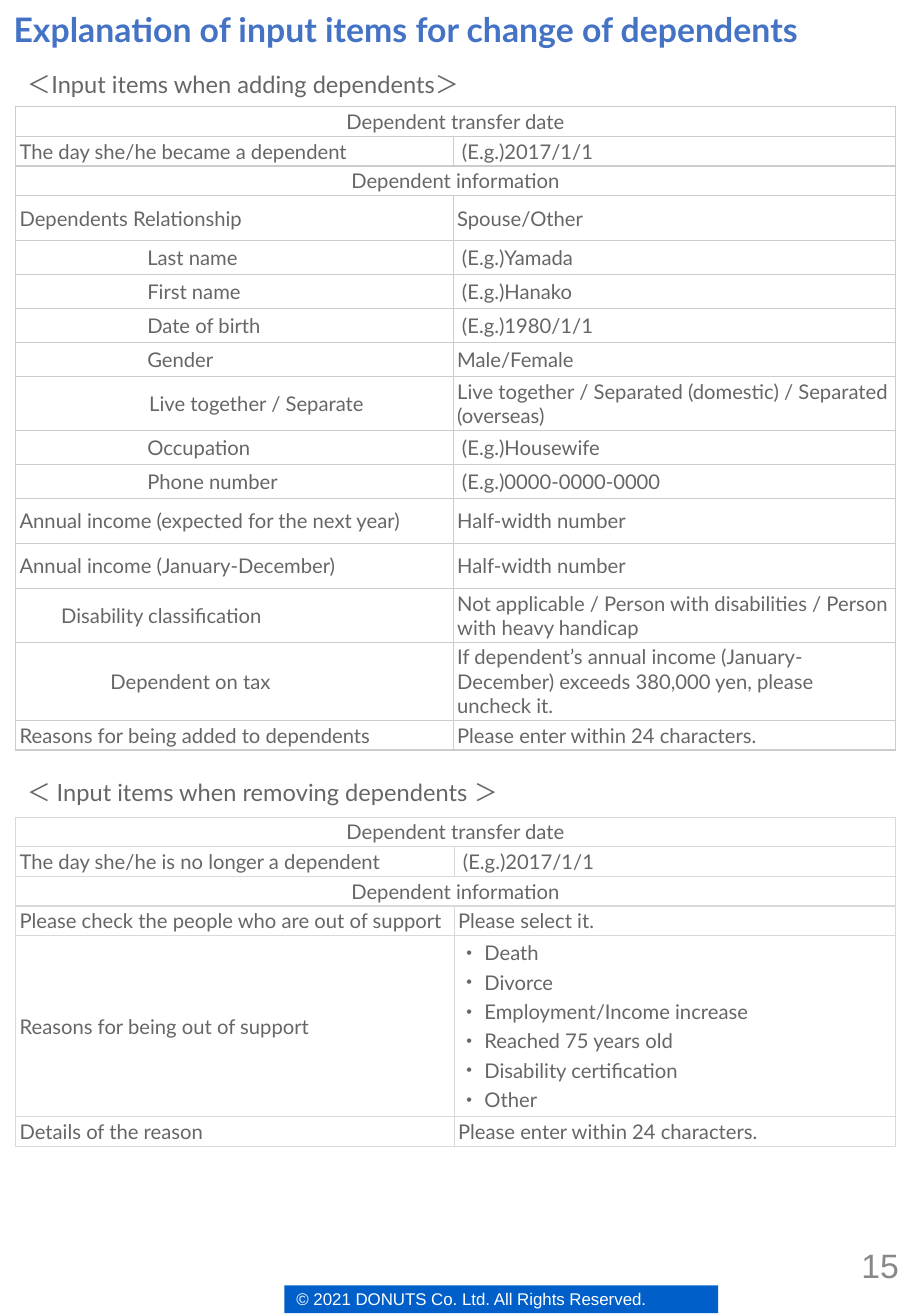
from dataclasses import dataclass
from lxml.etree import SubElement
from pptx import Presentation
from pptx.dml.color import RGBColor
from pptx.enum.shapes import MSO_SHAPE
from pptx.enum.text import MSO_ANCHOR, PP_ALIGN
from pptx.oxml.ns import qn
from pptx.util import Cm, Pt


@dataclass(frozen=True)
class Theme:
    font: str = "Lato"
    plain: str = "Arial"
    blue: str = "4472C4"
    bar: str = "005FC8"
    white: str = "FFFFFF"
    ink: str = "666666"
    pale: str = "888888"
    big: float = 20
    head: float = 14
    body: float = 12
    small: float = 10
    pitch: float = 17.4


THEME = Theme()
TITLE = "Explanation of input items for change of dependents"
NOTICE = "© 2021 DONUTS Co. Ltd. All Rights Reserved."
PAGE = "15"
REASONS = ["Death", "Divorce", "Employment/Income increase", "Reached 75 years old",
           "Disability certification", "Other"]

# Each row: height, label, label indent, entry
ADD = [
    (0.62, "Dependent transfer date", 0, None),
    (0.62, "The day she/he became a dependent", 0, "(E.g.)2017/1/1"),
    (0.62, "Dependent information", 0, None),
    (0.94, "Dependents Relationship", 0, "Spouse/Other"),
    (0.71, "Last name", 2.67, "(E.g.)Yamada"),
    (0.71, "First name", 2.67, "(E.g.)Hanako"),
    (0.71, "Date of birth", 2.67, "(E.g.)1980/1/1"),
    (0.71, "Gender", 2.67, "Male/Female"),
    (1.13, "Live together / Separate", 2.71, "Live together / Separated (domestic) / Separated (overseas)"),
    (0.71, "Occupation", 2.67, "(E.g.)Housewife"),
    (0.71, "Phone number", 2.67, "(E.g.)0000-0000-0000"),
    (0.94, "Annual income (expected for the next year)", 0, "Half-width number"),
    (0.94, "Annual income (January-December)", 0, "Half-width number"),
    (1.13, "Disability classification", 0.87, "Not applicable / Person with disabilities / Person with heavy handicap"),
    (1.63, "Dependent on tax", 1.9,
     "If dependent’s annual income (January-December) exceeds 380,000 yen, please uncheck it."),
    (0.62, "Reasons for being added to dependents", 0, "Please enter within 24 characters."),
]
REMOVE = [
    (0.62, "Dependent transfer date", 0, None),
    (0.62, "The day she/he is no longer a dependent", 0, "(E.g.)2017/1/1"),
    (0.62, "Dependent information", 0, None),
    (0.62, "Please check the people who are out of support", 0, "Please select it."),
    (3.78, "Reasons for being out of support", 0, REASONS),
    (0.62, "Details of the reason", 0, "Please enter within 24 characters."),
]
# Each part: heading, heading top, table top, column widths, line colour, rows
PARTS = [
    ("＜Input items when adding dependents＞", 1.33, 2.23, (9.15, 9.24), "CCCCCC", ADD),
    ("＜ Input items when removing dependents ＞", 16.14, 17.08, (9.17, 9.22), "D9D9D9", REMOVE),
]
LEFT = 0.33
INSET = 0.08


def style(part, size, tint, font=THEME.font, bold=False, align=PP_ALIGN.LEFT):
    for para in part.paragraphs:
        para.alignment = align
        for run in para.runs:
            run.font.name = font
            run.font.size = Pt(size)
            run.font.bold = bold
            run.font.color.rgb = RGBColor.from_string(tint)


def label(slide, text, box, size, tint, **look):
    frame = slide.shapes.add_textbox(*map(Cm, box)).text_frame
    frame.word_wrap = True
    frame.text = text
    style(frame, size, tint, **look)
    return frame


def border(cell, tint):
    props = cell._tc.get_or_add_tcPr()
    for side in ("lnL", "lnR", "lnT", "lnB"):
        line = SubElement(props, qn(f"a:{side}"), w=str(Pt(0.75)))
        fill = SubElement(line, qn("a:solidFill"))
        SubElement(fill, qn("a:srgbClr"), val=tint)


def bullet(para):
    props = para._p.get_or_add_pPr()
    props.set("marL", str(Cm(0.55)))
    props.set("indent", str(-Cm(0.38)))
    SubElement(props, qn("a:buSzPct"), val="80000")
    SubElement(props, qn("a:buFont"), typeface=THEME.plain)
    SubElement(props, qn("a:buChar"), char="•")
    para.line_spacing = Pt(THEME.pitch)


def write(cell, text, indent=0, align=PP_ALIGN.LEFT):
    cell.margin_left = Cm(INSET + indent)
    cell.vertical_anchor = MSO_ANCHOR.MIDDLE
    frame = cell.text_frame
    if isinstance(text, list):
        cell.margin_top, cell.margin_bottom = 0, Cm(0.1)
        frame.text = "\n".join(text)
        for para in frame.paragraphs:
            bullet(para)
    else:
        frame.text = text
    style(frame, THEME.body, THEME.ink, align=align)


def grid(slide, top, widths, tint, rows):
    high = sum(row[0] for row in rows)
    table = slide.shapes.add_table(len(rows), 2, Cm(LEFT), Cm(top), Cm(sum(widths)), Cm(high)).table
    table.first_row = table.horz_banding = False
    for col, width in zip(table.columns, widths):
        col.width = Cm(width)
    for cell in table.iter_cells():
        border(cell, tint)
        cell.fill.solid()
        cell.fill.fore_color.rgb = RGBColor.from_string(THEME.white)
        cell.margin_left = cell.margin_right = Cm(INSET)
        cell.margin_top = cell.margin_bottom = Cm(0.05)
    for at, (height, name, indent, entry) in enumerate(rows):
        table.rows[at].height = Cm(height)
        first, last = table.cell(at, 0), table.cell(at, 1)
        if entry is None:
            first.merge(last)
            write(first, name, align=PP_ALIGN.CENTER)
            last.text_frame.paragraphs[0].font.size = Pt(THEME.body)
        else:
            write(first, name, indent)
            write(last, entry, 0.1 if entry[0] == "(" or entry[0][0] == "(" else 0)


def banner(slide):
    bar = slide.shapes.add_shape(MSO_SHAPE.RECTANGLE, Cm(5.95), Cm(26.87), Cm(9.07), Cm(0.58))
    bar.shadow.inherit = False
    bar.fill.solid()
    bar.fill.fore_color.rgb = RGBColor.from_string(THEME.bar)
    bar.line.fill.background()
    bar.text_frame.text = NOTICE
    bar.text_frame.vertical_anchor = MSO_ANCHOR.MIDDLE
    style(bar.text_frame, THEME.small, THEME.white, font=THEME.plain)


def main():
    deck = Presentation()
    deck.slide_width, deck.slide_height = Cm(19.05), Cm(27.51)
    slide = deck.slides.add_slide(deck.slide_layouts[5])
    banner(slide)
    title = slide.shapes.title
    title.left, title.top, title.width, title.height = map(Cm, (0.03, 0, 19, 1.3))
    title.text_frame.text = TITLE
    title.text_frame.vertical_anchor = MSO_ANCHOR.MIDDLE
    title.text_frame.paragraphs[0].line_spacing = 0.9
    style(title.text_frame, THEME.big, THEME.blue, bold=True)
    page = label(slide, PAGE, (14.76, 25.7, 4.29, 1.47), THEME.big, THEME.pale,
                 font=THEME.plain, align=PP_ALIGN.RIGHT)
    page.vertical_anchor = MSO_ANCHOR.MIDDLE
    for head, high, top, widths, tint, rows in PARTS:
        grid(slide, top, widths, tint, rows)
        label(slide, head, (LEFT, high, 16.18, 0.76), THEME.head, THEME.ink)
    deck.save("out.pptx")


if __name__ == "__main__":
    main()
